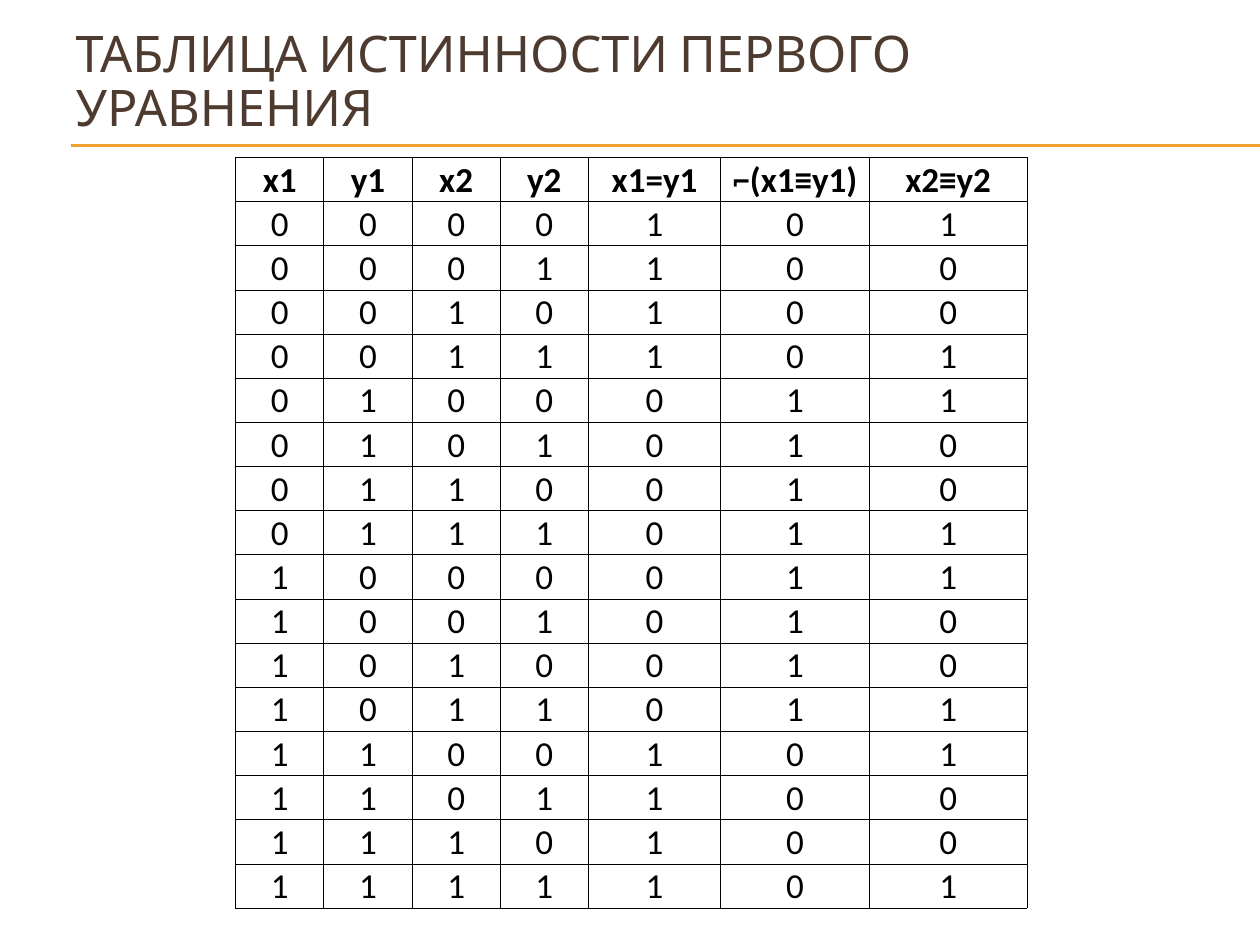
from itertools import product

from lxml.etree import SubElement
from pptx import Presentation
from pptx.dml.color import RGBColor
from pptx.enum.shapes import MSO_CONNECTOR
from pptx.enum.text import MSO_ANCHOR, PP_ALIGN
from pptx.oxml import parse_xml
from pptx.oxml.ns import nsdecls, qn
from pptx.util import Inches, Pt

COLORS = {"title": "4E3B30", "rule": "F0A22E", "ink": "000000"}
HEADERS = ["x1", "y1", "x2", "y2", "x1=y1", "⌐(x1≡y1)", "x2≡y2"]
COLUMN_WIDTHS = [0.7, 0.7, 0.7, 0.7, 1.05, 1.18, 1.25]


def write_text(frame, text, *, size, font, color, bold=False,
               align=PP_ALIGN.LEFT, anchor=MSO_ANCHOR.MIDDLE, spacing=1.0):
    """Put one formatted paragraph into a text frame."""
    frame.word_wrap = True
    frame.vertical_anchor = anchor
    paragraph = frame.paragraphs[0]
    paragraph.alignment = align
    paragraph.line_spacing = spacing
    run = paragraph.add_run()
    run.text = text
    run.font.size = Pt(size)
    run.font.name = font
    run.font.bold = bold
    run.font.color.rgb = RGBColor.from_string(COLORS[color])


def place_title(slide, left, top, width, height):
    """Move and fill the title placeholder."""
    title = slide.shapes.title
    title.left, title.top = Inches(left), Inches(top)
    title.width, title.height = Inches(width), Inches(height)
    write_text(title.text_frame, "ТАБЛИЦА ИСТИННОСТИ ПЕРВОГО УРАВНЕНИЯ",
               size=28.8, font="Cabin", color="title", spacing=0.9)


def draw_double_rule(slide, left, top, width, gap):
    """Draw the pair of thin rules under the title."""
    for y in (top, top + gap):
        rule = slide.shapes.add_connector(
            MSO_CONNECTOR.STRAIGHT, Inches(left), Inches(y),
            Inches(left + width), Inches(y))
        rule.line.color.rgb = RGBColor.from_string(COLORS["rule"])
        rule.line.width = Pt(0.75)
        SubElement(rule._element.spPr, qn("a:effectLst"))


def border_cell(cell):
    """Give a cell a thin border on all four sides."""
    properties = cell._tc.get_or_add_tcPr()
    for position, side in enumerate(("lnL", "lnR", "lnT", "lnB")):
        properties.insert(position, parse_xml(
            f'<a:{side} {nsdecls("a")} w="{Pt(0.5)}"><a:solidFill>'
            f'<a:srgbClr val="{COLORS["ink"]}"/></a:solidFill></a:{side}>'))


def truth_rows():
    """Work out the truth table for every combination of inputs."""
    for x1, y1, x2, y2 in product((0, 1), repeat=4):
        yield [x1, y1, x2, y2, int(x1 == y1), int(x1 != y1), int(x2 == y2)]


def place_truth_table(slide, left, top, width, height):
    """Build the truth table with its header row."""
    rows = [HEADERS, *truth_rows()]
    table = slide.shapes.add_table(
        len(rows), len(HEADERS), Inches(left), Inches(top),
        Inches(width), Inches(height)).table
    table.first_row = table.horz_banding = False
    for column, column_width in zip(table.columns, COLUMN_WIDTHS):
        column.width = Inches(column_width)
    for row_index, values in enumerate(rows):
        for column_index, value in enumerate(values):
            cell = table.cell(row_index, column_index)
            cell.fill.background()
            border_cell(cell)
            cell.margin_left = cell.margin_right = cell.margin_top = Inches(0.01)
            cell.margin_bottom = 0
            write_text(cell.text_frame, str(value), size=20, font="Calibri",
                       color="ink", bold=row_index == 0, align=PP_ALIGN.CENTER)
            cell.vertical_anchor = MSO_ANCHOR.BOTTOM


def main():
    """Assemble and save the slide."""
    presentation = Presentation()
    presentation.slide_width = Inches(10)
    presentation.slide_height = Inches(7.5)
    slide = presentation.slides.add_slide(presentation.slide_layouts[5])
    draw_double_rule(slide, 0.56, 1.15, 9.44, 0.01)
    place_title(slide, 0.5, 0.3, 9, 0.72)
    place_truth_table(slide, 1.87, 1.25, sum(COLUMN_WIDTHS), 5.84)
    presentation.save("out.pptx")


if __name__ == "__main__":
    main()
